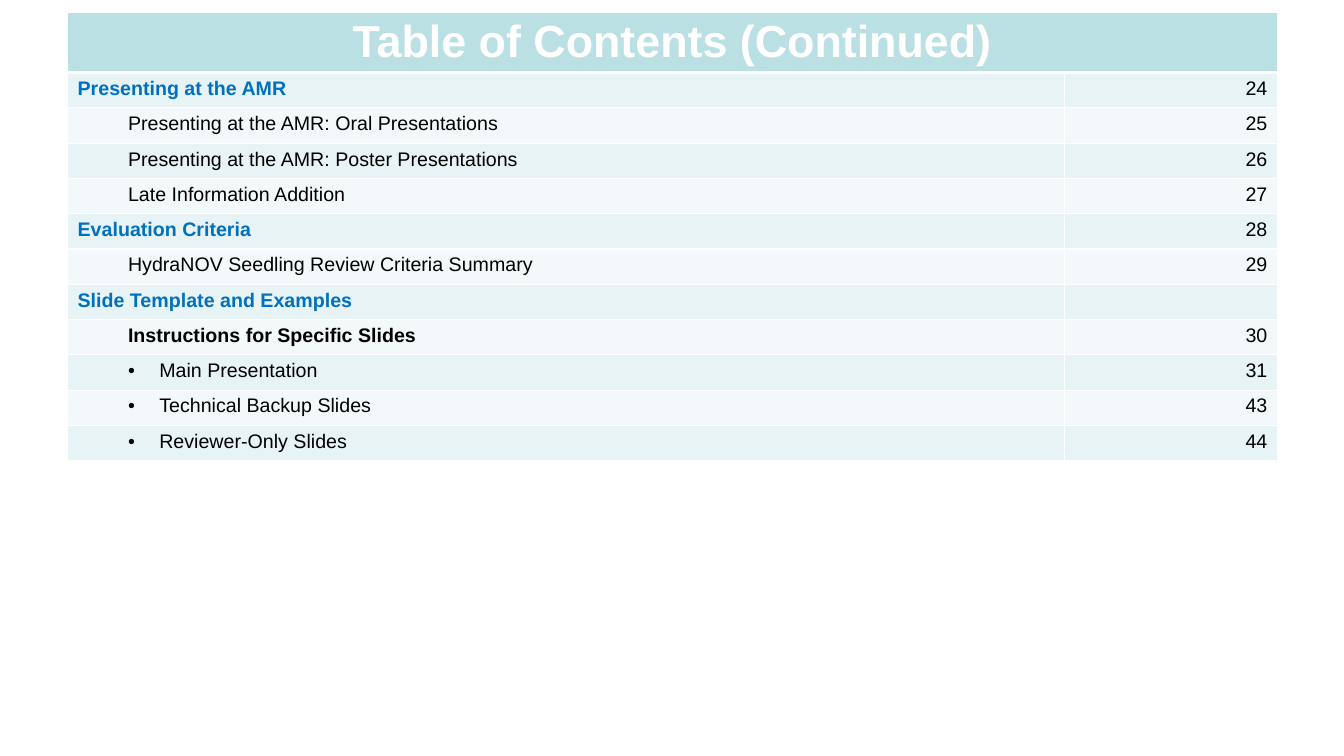
import pptx
import pptx.dml.color
import pptx.enum.text
import pptx.oxml
import pptx.oxml.ns
import pptx.table
import pptx.util
from dataclasses import dataclass
from enum import Enum
from lxml import etree
from pptx.util import Inches

ALIGN = pptx.enum.text.PP_ALIGN


@dataclass(frozen=True)
class Theme:
    font: str = "Arial"
    title_size: int = 32
    body_size: int = 14
    white: str = "FFFFFF"
    text: str = "000000"
    section: str = "0070C0"
    header_fill: str = "BBE0E3"
    odd_fill: str = "E7F3F4"
    even_fill: str = "F3F9FA"
    rule: float = 1
    header_rule: float = 3


THEME = Theme()


@dataclass(frozen=True)
class LevelStyle:
    color: str
    bold: bool = False
    margin: float = 0
    hanging: float = 0


class Level(Enum):
    SECTION = LevelStyle(THEME.section, bold=True)
    TOPIC = LevelStyle(THEME.text, margin=0.5)
    GROUP = LevelStyle(THEME.text, bold=True, margin=0.5)
    BULLET = LevelStyle(THEME.text, margin=0.81, hanging=0.31)


@dataclass(frozen=True)
class Entry:
    title: str
    page: str
    level: Level


ENTRIES = [
    Entry("Presenting at the AMR", "24", Level.SECTION),
    Entry("Presenting at the AMR: Oral Presentations", "25", Level.TOPIC),
    Entry("Presenting at the AMR: Poster Presentations", "26", Level.TOPIC),
    Entry("Late Information Addition", "27", Level.TOPIC),
    Entry("Evaluation Criteria", "28", Level.SECTION),
    Entry("HydraNOV Seedling Review Criteria Summary", "29", Level.TOPIC),
    Entry("Slide Template and Examples", "", Level.SECTION),
    Entry("Instructions for Specific Slides", "30", Level.GROUP),
    Entry("Main Presentation", "31", Level.BULLET),
    Entry("Technical Backup Slides", "43", Level.BULLET),
    Entry("Reviewer-Only Slides", "44", Level.BULLET),
]
COLUMN_WIDTHS = (9.89, 2.11)
HEADER_HEIGHT = 0.6
ENTRY_HEIGHT = 0.35


def add_xml(parent: etree.ElementBase, tag: str, **attributes: str) -> etree.ElementBase:
    child = etree.SubElement(parent, pptx.oxml.ns.qn(tag))
    for name, value in attributes.items():
        child.set(name, value)
    return child


def paint_cell(cell: pptx.table._Cell, fill: str, top: float, bottom: float) -> None:
    """Draw white borders and then the fill, in the order the schema requires."""
    properties = cell._tc.get_or_add_tcPr()
    widths = {"a:lnL": THEME.rule, "a:lnR": THEME.rule, "a:lnT": top, "a:lnB": bottom}
    for tag, width in widths.items():
        line = add_xml(properties, tag, w=str(pptx.util.Pt(width)))
        add_xml(add_xml(line, "a:solidFill"), "a:srgbClr", val=THEME.white)
    cell.fill.solid()
    cell.fill.fore_color.rgb = pptx.dml.color.RGBColor.from_string(fill)


def write_cell(cell: pptx.table._Cell, text: str, style: LevelStyle,
               size: int = THEME.body_size, align: ALIGN = ALIGN.LEFT) -> None:
    para = cell.text_frame.paragraphs[0]
    para.text = text
    para.alignment = align
    properties = para._p.get_or_add_pPr()
    properties.set("marL", str(Inches(style.margin)))
    properties.set("indent", str(Inches(-style.hanging)))
    if style.hanging:
        add_xml(properties, "a:buFont", typeface=THEME.font)
        add_xml(properties, "a:buChar", char="•")
    for span in para.runs:
        span.font.name = THEME.font
        span.font.size = pptx.util.Pt(size)
        span.font.bold = style.bold
        span.font.color.rgb = pptx.dml.color.RGBColor.from_string(style.color)
    if not text:
        # An empty cell needs its own type size to keep the row height.
        add_xml(para._p, "a:endParaRPr", sz=str(size * 100))


def add_contents_table(page: pptx.slide.Slide) -> None:
    height = HEADER_HEIGHT + ENTRY_HEIGHT * len(ENTRIES)
    table = page.shapes.add_table(len(ENTRIES) + 1, len(COLUMN_WIDTHS), Inches(0.67),
                                  Inches(0.12), Inches(12), Inches(height)).table
    table.first_row = False
    table.horz_banding = False
    for column, width in zip(table.columns, COLUMN_WIDTHS):
        column.width = Inches(width)
    for row_index, row in enumerate(table.rows):
        row.height = Inches(ENTRY_HEIGHT if row_index else HEADER_HEIGHT)
        fill = THEME.odd_fill if row_index % 2 else THEME.even_fill
        for cell in row.cells:
            paint_cell(cell, fill if row_index else THEME.header_fill,
                       THEME.header_rule if row_index == 1 else THEME.rule,
                       THEME.header_rule if row_index == 0 else THEME.rule)

    table.cell(0, 0).merge(table.cell(0, 1))
    write_cell(table.cell(0, 0), "Table of Contents (Continued)",
               LevelStyle(THEME.white, bold=True), THEME.title_size, ALIGN.CENTER)
    for row_index, entry in enumerate(ENTRIES, start=1):
        write_cell(table.cell(row_index, 0), entry.title, entry.level.value)
        write_cell(table.cell(row_index, 1), entry.page, LevelStyle(THEME.text),
                   align=ALIGN.RIGHT)


def main() -> None:
    deck = pptx.Presentation()
    deck.slide_width = Inches(13.33)
    deck.slide_height = Inches(7.5)
    page = deck.slides.add_slide(deck.slide_layouts[6])
    add_contents_table(page)
    deck.save("out.pptx")


if __name__ == "__main__":
    main()
